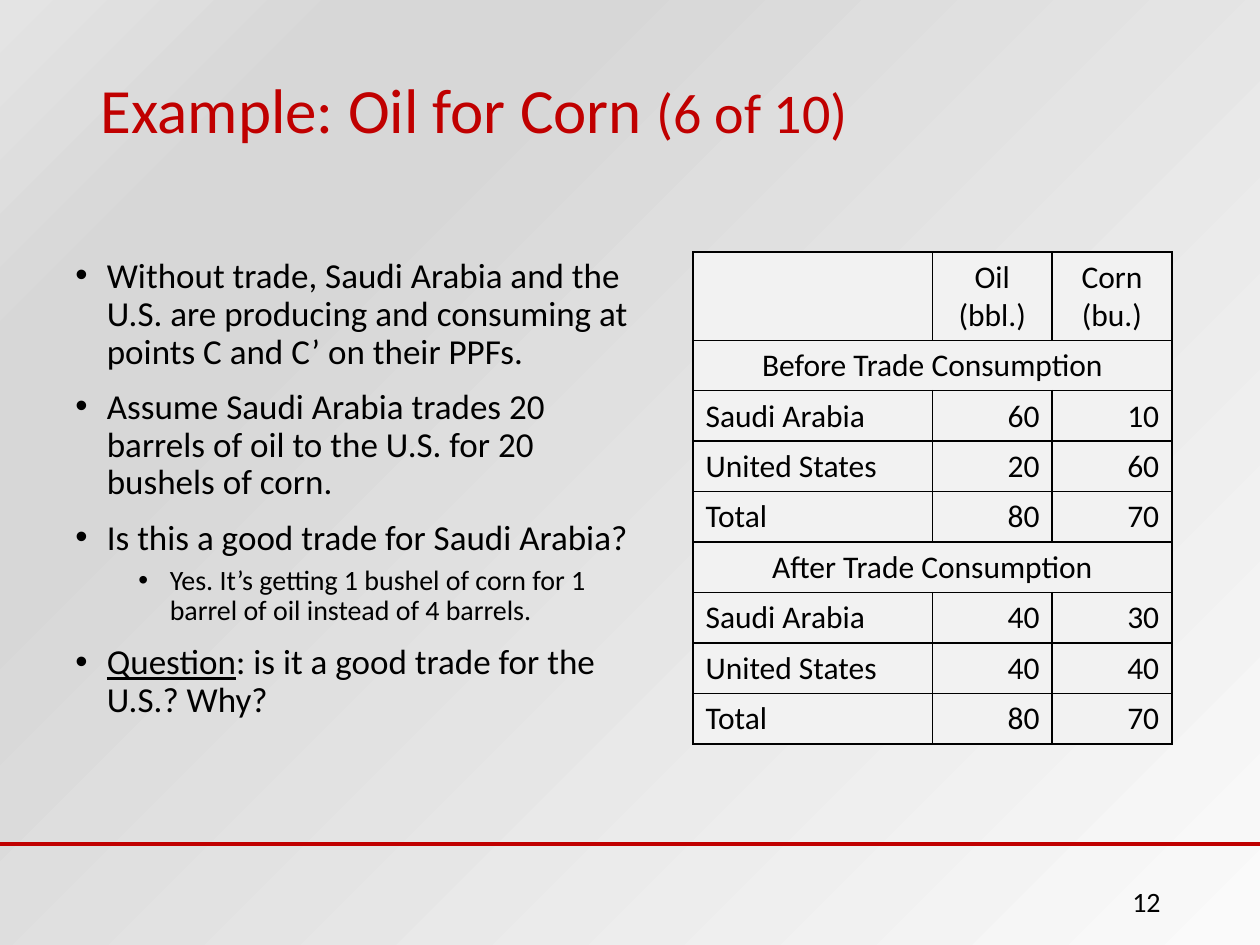
from lxml import etree
from pptx import Presentation
from pptx.dml.color import RGBColor
from pptx.enum.shapes import MSO_CONNECTOR
from pptx.enum.text import MSO_ANCHOR, MSO_AUTO_SIZE, PP_ALIGN
from pptx.oxml import parse_xml
from pptx.oxml.ns import qn
from pptx.util import Pt

LEFT, CENTER, RIGHT = PP_ALIGN.LEFT, PP_ALIGN.CENTER, PP_ALIGN.RIGHT
MIDDLE = MSO_ANCHOR.MIDDLE
NO_FIT = MSO_AUTO_SIZE.NONE
STRAIGHT = MSO_CONNECTOR.STRAIGHT
NAMESPACES = (
    'xmlns:a="http://schemas.openxmlformats.org/drawingml/2006/main" '
    'xmlns:p="http://schemas.openxmlformats.org/presentationml/2006/main"'
)
RED, BLACK, PALE = "C00000", "000000", "F2F2F2"


def color(value):
    return RGBColor.from_string(value)


def style(para, size, value=BLACK):
    for span in para.runs:
        span.font.name = "Calibri"
        span.font.size = Pt(size)
        span.font.color.rgb = color(value)


deck = Presentation()
deck.slide_width, deck.slide_height = Pt(720), Pt(540)
page = deck.slides.add_slide(deck.slide_layouts[5])

stops = [(0, "FAFAFA"), (74, "D7D7D7"), (83, "D7D7D7"), (100, "E4E4E4")]
stop_xml = "".join(
    f'<a:gs pos="{position * 1000}"><a:srgbClr val="{value}"/></a:gs>'
    for position, value in stops
)
background = parse_xml(
    f'<p:bg {NAMESPACES}><p:bgPr><a:gradFill rotWithShape="1"><a:gsLst>{stop_xml}</a:gsLst>'
    '<a:path path="circle"><a:fillToRect l="100000" t="100000"/></a:path>'
    "</a:gradFill><a:effectLst/></p:bgPr></p:bg>"
)
page.element.cSld.insert(0, background)

title = page.shapes.title
title.left, title.top, title.width, title.height = Pt(50.4), Pt(21.6), Pt(619.2), Pt(86.4)
title.text_frame.text = "Example: Oil for Corn "
title.text_frame.auto_size = NO_FIT
title.text_frame.vertical_anchor = MIDDLE
para = title.text_frame.paragraphs[0]
para.alignment = LEFT
para.line_spacing = 0.9
para.add_run().text = "(6 of 10)"
style(para, 36, RED)
para.runs[1].font.size = Pt(32)

points = [
    (0, "Without trade, Saudi Arabia and the U.S. are producing and consuming at "
        "points C and C’ on their PPFs."),
    (0, "Assume Saudi Arabia trades 20 barrels of oil to the U.S. for 20 bushels of corn."),
    (0, "Is this a good trade for Saudi Arabia?"),
    (1, "Yes. It’s getting 1 bushel of corn for 1 barrel of oil instead of 4 barrels."),
    (0, "Question"),
]
body = page.shapes.add_textbox(Pt(36), Pt(144), Pt(331.2), Pt(345.6)).text_frame
body.word_wrap = True
for index, (level, text) in enumerate(points):
    para = body.add_paragraph() if index else body.paragraphs[0]
    para.text = text
    para.level = level
    para.line_spacing = 0.9
    para.space_before = Pt(5 if level else 10)
    properties = para._p.get_or_add_pPr()
    properties.set("marL", str(Pt(18 + 36 * level)))
    properties.set("indent", str(Pt(-18)))
    etree.SubElement(properties, qn("a:buFont")).set("typeface", "Arial")
    etree.SubElement(properties, qn("a:buChar")).set("char", "•")
    style(para, 16 if level else 20)
para.runs[0].font.underline = True
para.add_run().text = ": is it a good trade for the U.S.? Why?"
style(para, 20)

rule = page.shapes.add_connector(STRAIGHT, 0, Pt(482.4), Pt(720), Pt(482.4))
rule.line.color.rgb = color(RED)
rule.line.width = Pt(2)
etree.SubElement(rule._element.spPr, qn("a:effectLst"))

number = page.shapes.add_textbox(Pt(508.3), Pt(500.4), Pt(162), Pt(28.8)).text_frame
number.word_wrap = True
number.vertical_anchor = MIDDLE
number.text = "12"
number.paragraphs[0].alignment = RIGHT
style(number.paragraphs[0], 16)

rows = [
    ["", "Oil (bbl.)", "Corn (bu.)"],
    ["Before Trade Consumption"],
    ["Saudi Arabia", "60", "10"],
    ["United States", "20", "60"],
    ["Total", "80", "70"],
    ["After Trade Consumption"],
    ["Saudi Arabia", "40", "30"],
    ["United States", "40", "40"],
    ["Total", "80", "70"],
]
table = page.shapes.add_table(len(rows), 3, Pt(396), Pt(144), Pt(273.6), Pt(282.2)).table
for column, width in zip(table.columns, (136.8, 68.4, 68.4)):
    column.width = Pt(width)
for row_index, texts in enumerate(rows):
    table.rows[row_index].height = Pt(28.8 if row_index else 50)
    heading = row_index == 0 or len(texts) == 1
    for column_index, cell in enumerate(table.rows[row_index].cells):
        for side in ("lnL", "lnR", "lnT", "lnB"):
            border = parse_xml(
                f'<a:{side} {NAMESPACES} w="{Pt(1)}"><a:solidFill>'
                f'<a:srgbClr val="{BLACK}"/></a:solidFill></a:{side}>'
            )
            cell._tc.get_or_add_tcPr().append(border)
        cell.fill.solid()
        cell.fill.fore_color.rgb = color(PALE)
        if column_index < len(texts):
            cell.text_frame.text = texts[column_index]
            para = cell.text_frame.paragraphs[0]
            para.alignment = CENTER if heading else RIGHT if column_index else LEFT
            style(para, 18)
    if len(texts) == 1:
        table.cell(row_index, 0).merge(table.cell(row_index, 2))

deck.save("out.pptx")
